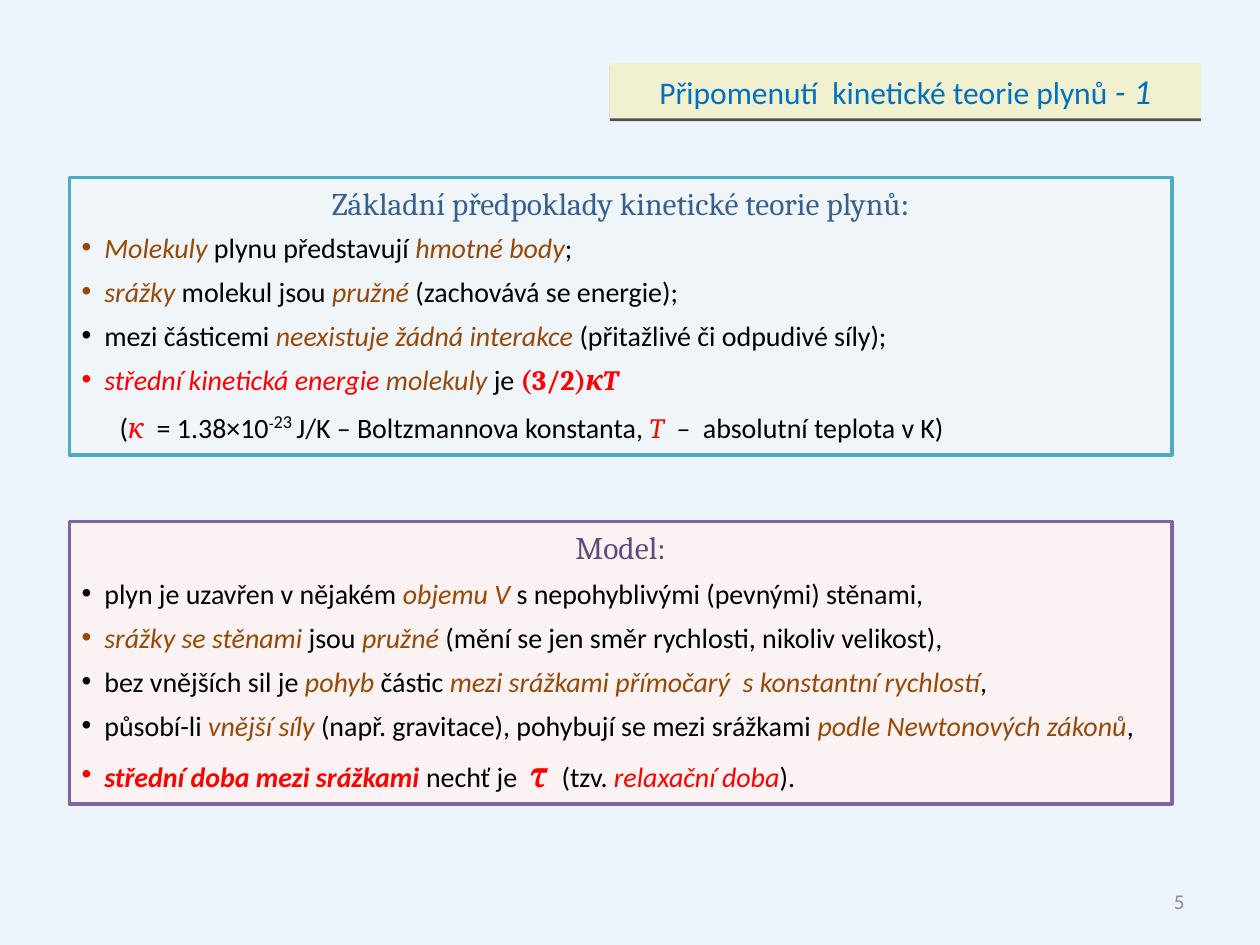
from lxml.etree import SubElement
from pptx import Presentation
from pptx.dml.color import RGBColor
from pptx.enum.shapes import MSO_SHAPE
from pptx.enum.text import MSO_ANCHOR, MSO_AUTO_SIZE, PP_ALIGN
from pptx.oxml.ns import qn
from pptx.util import Inches, Pt

COLORS = {
    "background": "EEF4FB", "banner": "F1F0CF", "banner text": "0070C0",
    "theory": "F0F5FA", "theory line": "4BACC6", "theory title": "376092",
    "model": "FBF3F3", "model line": "8064A2", "model title": "604A7B",
    "black": "000000", "brown": "984807", "red": "FF0000", "gray": "8C8C8C",
}

# style: (size, font, color, bold, italic, superscript)
STYLES = {
    "plain": (16, "Calibri", "black", False, False, False),
    "slanted": (16, "Calibri", "black", False, True, False),
    "term": (16, "Calibri", "brown", False, True, False),
    "key": (16, "Calibri", "red", False, True, False),
    "strong": (16, "Calibri", "red", True, True, False),
    "number": (16, "Cambria", "red", True, False, False),
    "formula": (16, "Cambria", "red", True, True, False),
    "symbol": (16, "Cambria", "red", False, True, False),
    "tau": (20, "Cambria", "red", True, True, False),
    "minus": (16, "Calibri", "black", False, False, True),
    "exponent": (18, "Calibri", "black", False, False, True),
    "theory title": (18, "Cambria", "theory title", False, False, False),
    "theory colon": (18, "Calibri", "theory title", False, False, False),
    "model title": (18, "Cambria", "model title", False, False, False),
    "banner": (18, "Calibri", "banner text", False, False, False),
    "banner number": (20, "Calibri", "banner text", False, True, False),
    "page": (12, "Calibri", "gray", False, False, False),
}

BANNER = [("Připomenutí  kinetické teorie plynů ", "banner"), ("- 1", "banner number")]
PAGE = [("5", "page")]

# Each panel: name, top, height, space after title, title, bullets, closing note
PANELS = [
    ("theory", 1.41, 2.2, 5,
     [("Základní předpoklady kinetické teorie plynů", "theory title"), (":", "theory colon")],
     [
         [("Molekuly", "term"), (" plynu představují ", "plain"),
          ("hmotné body", "term"), (";", "plain")],
         [("srážky", "term"), (" molekul jsou ", "plain"), ("pružné", "term"),
          (" (zachovává se energie);", "plain")],
         [("mezi částicemi ", "plain"), ("neexistuje žádná interakce ", "term"),
          ("(přitažlivé či odpudivé síly);", "plain")],
         [("střední kinetická energie ", "key"), ("molekuly ", "term"), ("je ", "plain"),
          ("(3/2)", "number"), ("κT", "formula")],
     ],
     [("(", "plain"), ("κ", "symbol"), ("  = 1.38×10", "plain"), ("-", "minus"),
      ("23 ", "exponent"), ("J/K – Boltzmannova konstanta, ", "plain"), ("T", "symbol"),
      ("  –  ", "slanted"), ("absolutní teplota v K)", "plain")]),
    ("model", 4.14, 2.24, 6,
     [("Model:", "model title")],
     [
         [("plyn je uzavřen v nějakém ", "plain"), ("objemu V", "term"),
          (" s nepohyblivými (pevnými) stěnami,", "plain")],
         [("srážky se stěnami ", "term"), ("jsou ", "plain"), ("pružné", "term"),
          (" (mění se jen směr rychlosti, nikoliv velikost),", "plain")],
         [("bez vnějších sil je ", "plain"), ("pohyb", "term"), (" částic ", "plain"),
          ("mezi srážkami přímočarý  s konstantní rychlostí", "term"), (",", "plain")],
         [("působí-li ", "plain"), ("vnější síly ", "term"),
          ("(např. gravitace), pohybují se mezi srážkami ", "plain"),
          ("podle Newtonových zákonů", "term"), (",", "plain")],
         [("střední doba mezi srážkami ", "strong"), ("nechť je  ", "plain"), ("τ ", "tau"),
          (" (tzv. ", "plain"), ("relaxační doba", "key"), (").", "plain")],
     ],
     None),
]
PANEL_LEFT, PANEL_WIDTH = 0.55, 8.75
BULLET_INDENT, NOTE_INDENT = 0.18, 0.3


def color(name):
    return RGBColor.from_string(COLORS[name])


def write(paragraph, pieces, align=PP_ALIGN.LEFT, after=0):
    paragraph.alignment = align
    paragraph.space_after = Pt(after)
    for text, style in pieces:
        size, face, ink, bold, italic, raised = STYLES[style]
        run = paragraph.add_run()
        run.text = text
        font = run.font
        font.size, font.name, font.bold, font.italic = Pt(size), face, bold, italic
        font.color.rgb = color(ink)
        if raised:
            run._r.get_or_add_rPr().set("baseline", "30000")


def indent(paragraph, inches, bullet=False):
    properties = paragraph._p.get_or_add_pPr()
    properties.set("marL", str(Inches(inches)))
    if bullet:
        properties.set("indent", str(-Inches(inches)))
        SubElement(properties, qn("a:buFont"), typeface="Arial")
        SubElement(properties, qn("a:buChar"), char="•")


def add_box(slide, fill, left, top, width, height):
    box = slide.shapes.add_shape(
        MSO_SHAPE.RECTANGLE, Inches(left), Inches(top), Inches(width), Inches(height))
    box.shadow.inherit = False
    box.fill.solid()
    box.fill.fore_color.rgb = color(fill)
    frame = box.text_frame
    frame.word_wrap = True
    frame.vertical_anchor = MSO_ANCHOR.TOP
    frame.auto_size = MSO_AUTO_SIZE.SHAPE_TO_FIT_TEXT
    return box


def add_panel(slide, name, top, height, title_gap, title, bullets, note):
    panel = add_box(slide, name, PANEL_LEFT, top, PANEL_WIDTH, height)
    panel.line.color.rgb = color(name + " line")
    panel.line.width = Pt(2)
    frame = panel.text_frame
    write(frame.paragraphs[0], title, PP_ALIGN.CENTER, title_gap)
    for pieces in bullets:
        paragraph = frame.add_paragraph()
        write(paragraph, pieces, after=6)
        indent(paragraph, BULLET_INDENT, bullet=True)
    if note:
        paragraph = frame.add_paragraph()
        write(paragraph, note, after=6)
        indent(paragraph, NOTE_INDENT)


def add_banner(slide):
    banner = add_box(slide, "banner", 4.84, 0.5, 4.69, 0.44)
    banner.line.fill.background()
    write(banner.text_frame.paragraphs[0], BANNER, PP_ALIGN.CENTER)
    effects = banner._element.spPr.find(qn("a:effectLst"))
    shadow = SubElement(effects, qn("a:outerShdw"), blurRad="0", dist=str(Pt(1.6)),
                        dir="5400000", rotWithShape="0")
    ink = SubElement(shadow, qn("a:srgbClr"), val=COLORS["black"])
    SubElement(ink, qn("a:alpha"), val="65000")


def add_page_number(slide):
    page = slide.shapes.add_textbox(Inches(7.17), Inches(6.95), Inches(2.33), Inches(0.4))
    page.text_frame.word_wrap = True
    page.text_frame.vertical_anchor = MSO_ANCHOR.MIDDLE
    write(page.text_frame.paragraphs[0], PAGE, PP_ALIGN.RIGHT)


def main():
    deck = Presentation()
    deck.slide_width, deck.slide_height = Inches(10), Inches(7.5)
    slide = deck.slides.add_slide(deck.slide_layouts[6])
    slide.background.fill.solid()
    slide.background.fill.fore_color.rgb = color("background")
    for panel in PANELS:
        add_panel(slide, *panel)
    add_banner(slide)
    add_page_number(slide)
    deck.save("out.pptx")


if __name__ == "__main__":
    main()
